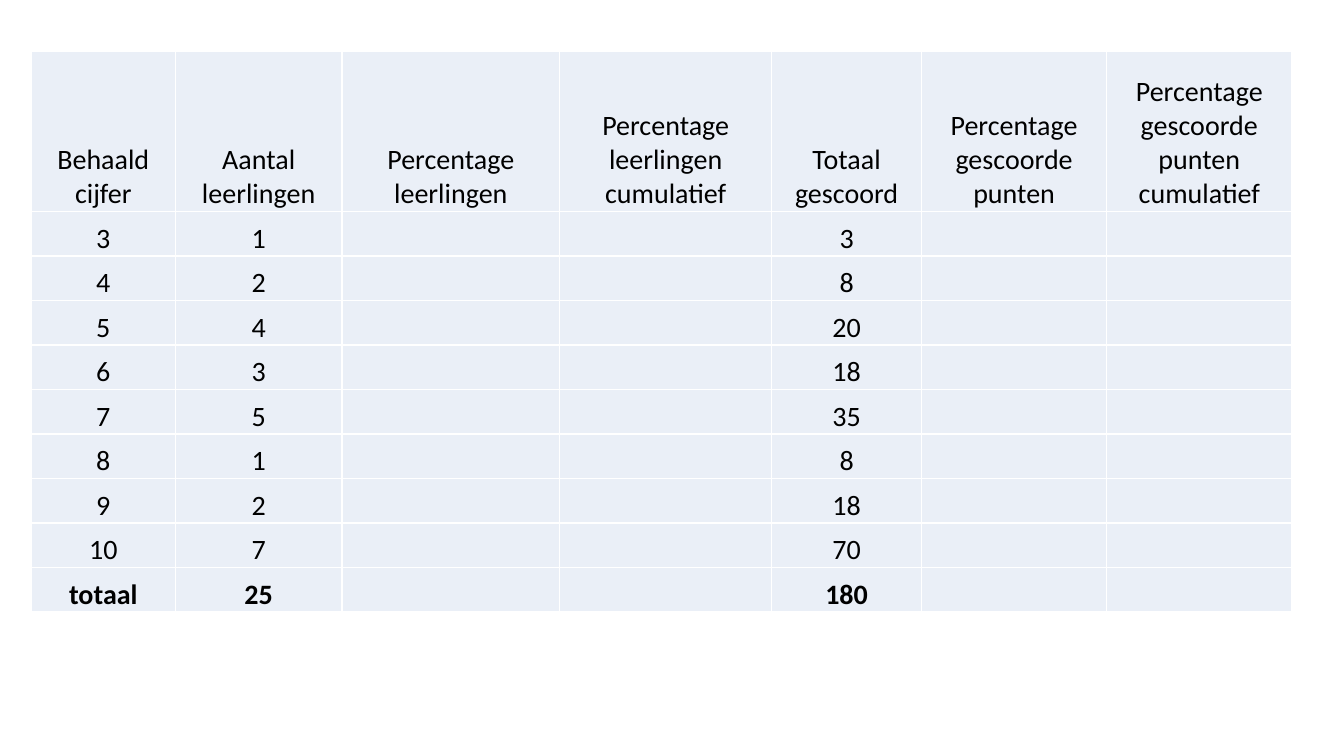
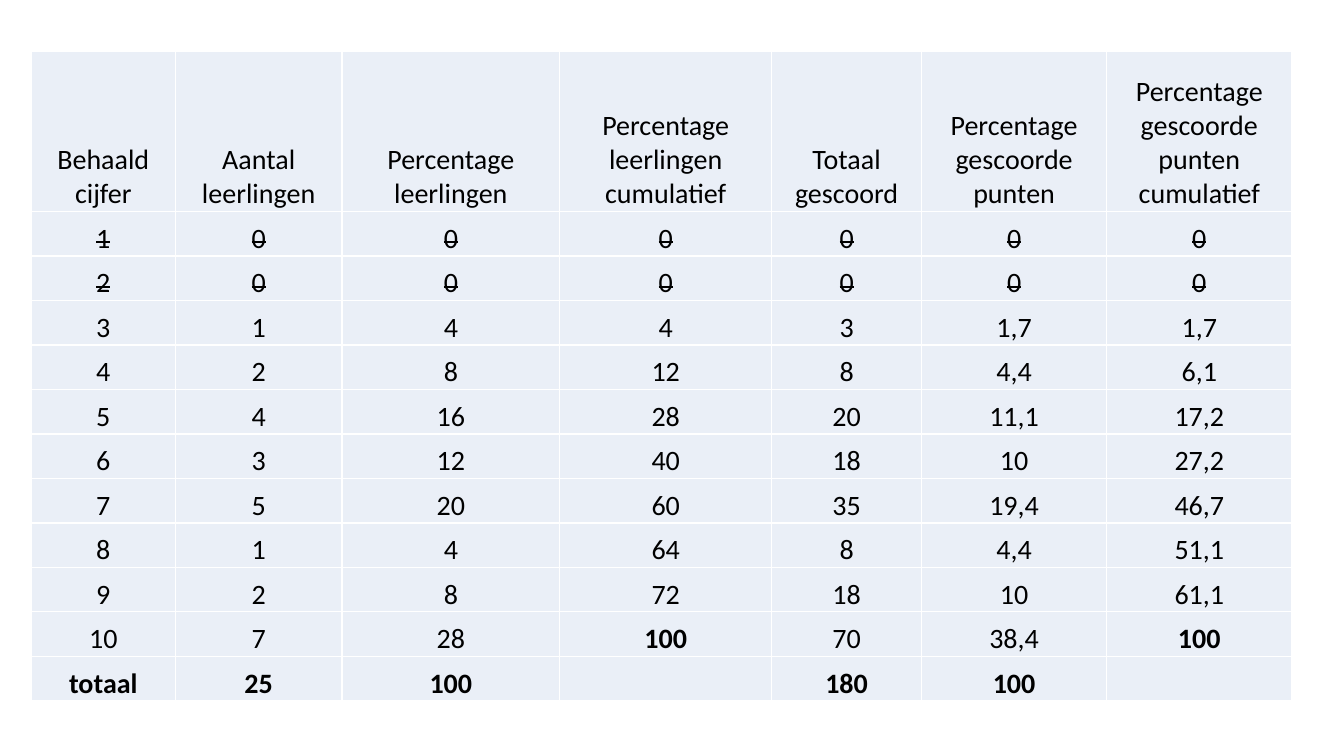
from lxml import etree
from pptx import Presentation
from pptx.dml.color import RGBColor
from pptx.enum.text import MSO_ANCHOR, PP_ALIGN
from pptx.oxml.ns import qn
from pptx.util import Pt

BOTTOM = MSO_ANCHOR.BOTTOM
CENTER = PP_ALIGN.CENTER
BLACK = RGBColor(0x00, 0x00, 0x00)
WHITE = RGBColor(0xFF, 0xFF, 0xFF)
PALE_BLUE = RGBColor(0xEA, 0xEF, 0xF7)

TABLE_LEFT, TABLE_TOP = 22.3, 36.9
HEADER_HEIGHT, ROW_HEIGHT = 114.2, 31.8
COLUMN_WIDTHS = [103, 119, 155.5, 151.5, 107, 132.3, 132.3]
CELL_FORMAT = {
    "margin_left": Pt(0.7),
    "margin_right": Pt(0.7),
    "margin_top": Pt(0.7),
    "margin_bottom": Pt(0),
    "vertical_anchor": BOTTOM,
}
FONT_FORMAT = {"name": "Calibri", "size": Pt(20)}

HEADERS = [
    "Behaald cijfer",
    "Aantal leerlingen",
    "Percentage leerlingen",
    "Percentage leerlingen cumulatief",
    "Totaal gescoord",
    "Percentage gescoorde punten",
    "Percentage gescoorde punten cumulatief",
]
UNUSED_GRADES = [
    ["1", "0", "0", "0", "0", "0", "0"],
    ["2", "0", "0", "0", "0", "0", "0"],
]
GRADES = [
    ["3", "1", "4", "4", "3", "1,7", "1,7"],
    ["4", "2", "8", "12", "8", "4,4", "6,1"],
    ["5", "4", "16", "28", "20", "11,1", "17,2"],
    ["6", "3", "12", "40", "18", "10", "27,2"],
    ["7", "5", "20", "60", "35", "19,4", "46,7"],
    ["8", "1", "4", "64", "8", "4,4", "51,1"],
    ["9", "2", "8", "72", "18", "10", "61,1"],
    ["10", "7", "28", "100", "70", "38,4", "100"],
    ["totaal", "25", "100", "", "180", "100", ""],
]
GIVEN_COLUMNS = {0, 1, 4}
exercise = [
    [text if column in GIVEN_COLUMNS else "" for column, text in enumerate(row)]
    for row in GRADES
]
SLIDE_TABLES = [[HEADERS] + exercise, [HEADERS] + UNUSED_GRADES + GRADES]


def style_cell(cell):
    for name, value in CELL_FORMAT.items():
        setattr(cell, name, value)
    properties = cell._tc.get_or_add_tcPr()
    for side in ("a:lnL", "a:lnR", "a:lnT", "a:lnB"):
        line = etree.SubElement(properties, qn(side), w=str(Pt(1)))
        fill = etree.SubElement(line, qn("a:solidFill"))
        etree.SubElement(fill, qn("a:srgbClr"), val=str(WHITE))
    cell.fill.solid()
    cell.fill.fore_color.rgb = PALE_BLUE


def write_cell(cell, text, bold, struck):
    para = cell.text_frame.paragraphs[0]
    para.alignment = CENTER
    span = para.add_run()
    span.text = text
    for name, value in FONT_FORMAT.items():
        setattr(span.font, name, value)
    span.font.bold = bold
    span.font.color.rgb = BLACK
    if struck:
        span._r.get_or_add_rPr().set("strike", "sngStrike")


deck = Presentation()
deck.slide_width, deck.slide_height = Pt(960), Pt(540)
blank = deck.slide_layouts[6]

for rows in SLIDE_TABLES:
    page = deck.slides.add_slide(blank)
    height = HEADER_HEIGHT + ROW_HEIGHT * (len(rows) - 1)
    table = page.shapes.add_table(
        len(rows), len(HEADERS),
        Pt(TABLE_LEFT), Pt(TABLE_TOP), Pt(sum(COLUMN_WIDTHS)), Pt(height),
    ).table
    table.first_row = False
    table.horz_banding = False
    for column, width in zip(table.columns, COLUMN_WIDTHS):
        column.width = Pt(width)

    for row_index, row in enumerate(rows):
        table.rows[row_index].height = Pt(ROW_HEIGHT if row_index else HEADER_HEIGHT)
        for column_index, text in enumerate(row):
            cell = table.cell(row_index, column_index)
            style_cell(cell)
            if text:
                bold = row[0] == "totaal" or text == "100"
                write_cell(cell, text, bold, row in UNUSED_GRADES)

deck.save("out.pptx")
